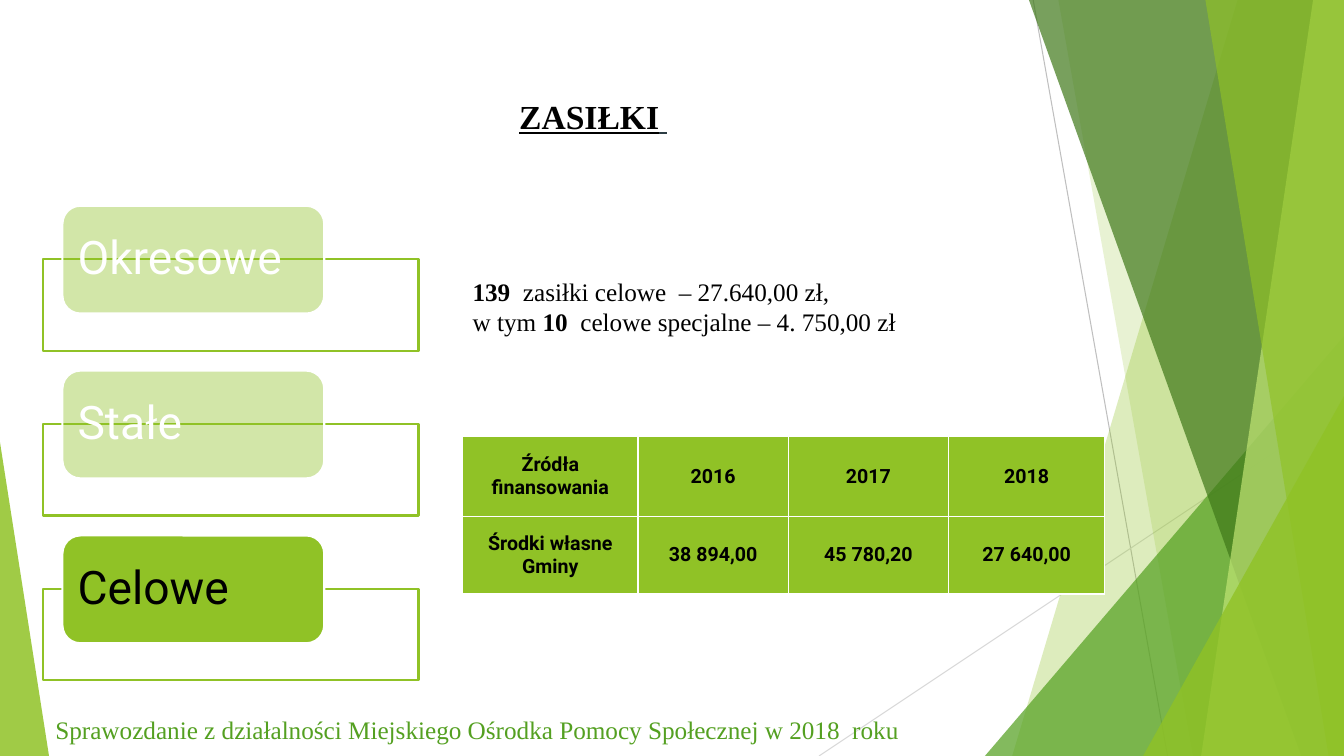
from dataclasses import dataclass
from typing import NamedTuple

from lxml.etree import SubElement
from pptx import Presentation
from pptx.dml.color import RGBColor
from pptx.enum.shapes import MSO_CONNECTOR, MSO_SHAPE
from pptx.enum.text import MSO_ANCHOR, PP_ALIGN
from pptx.oxml.ns import qn
from pptx.util import Pt

COLORS = {
    "lime": "90C226", "green": "54A021", "forest": "3F7819", "pale": "C0E474",
    "white": "FFFFFF", "black": "000000", "slate": "2C3C43",
    "gray": "BFBFBF", "light_gray": "D9D9D9",
}
SERIF, SANS = "Times New Roman", "Roboto"
WIDTH, HEIGHT = 960, 540


class Span(NamedTuple):
    text: str
    color: str = "black"
    bold: bool = False
    underline: bool = False


class Ray(NamedTuple):
    start: tuple[float, float]
    end: tuple[float, float]
    color: str


@dataclass
class Facet:
    points: list[tuple[float, float]]
    color: str
    alpha: int


@dataclass
class Wedge:
    box: tuple[float, float, float, float]
    apex: float
    color: str
    alpha: int


@dataclass
class Benefit:
    name: str
    alpha: int
    color: str


def panel(top_x: float, bottom_x: float, color: str, alpha: int) -> Facet:
    """Full-height facet between a slanted left edge and the slide's right edge."""
    points = [(top_x, 0), (WIDTH, 0), (WIDTH, HEIGHT), (bottom_x, HEIGHT)]
    return Facet(points, color, alpha)


RAYS = [Ray((738, 0), (834, HEIGHT), "gray"), Ray((WIDTH, 290), (585, HEIGHT), "light_gray")]
DECOR = [
    panel(884, 723, "lime", 30),
    panel(756, 852, "lime", 20),
    Wedge((703.5, 240, 256.5, 300), 1, "green", 72),
    panel(735, 929.5, "forest", 70),
    panel(938, 858, "pale", 70),
    panel(861, 949, "lime", 65),
    Wedge((816.5, 283, 143.5, 257), 1, "lime", 80),
    Wedge((0, 316, 35, 224), 0, "lime", 85),
]
BENEFITS = [
    Benefit("Okresowe", 40, "white"),
    Benefit("Stałe", 40, "white"),
    Benefit("Celowe", 100, "black"),
]
BENEFIT_TOP, BENEFIT_STEP = 147, 117.75
TITLE = [[Span("ZASIŁKI", bold=True, underline=True),
          Span(" ", "slate", bold=True, underline=True)]]
SUMMARY = [
    [Span("139  ", bold=True), Span("zasiłki celowe  – 27.640,00 zł,")],
    [Span("w tym "), Span("10", bold=True), Span("  celowe specjalne – 4. 750,00 zł")],
]
FOOTER = [[Span("Sprawozdanie z działalności Miejskiego Ośrodka Pomocy Społecznej w 2018  roku",
                "green")]]
FUNDING = [
    ["Źródła finansowania", "2016", "2017", "2018"],
    ["Środki własne Gminy", "38 894,00", "45 780,20", "27 640,00"],
]
COLUMN_WIDTHS = [125.3, 107.3, 114.5, 111.6]
ROW_HEIGHTS = [57, 55.5]


def rgb(name: str) -> RGBColor:
    return RGBColor.from_string(COLORS[name])


def place(sp, left: float, top: float, width: float, height: float) -> None:
    sp.left, sp.top, sp.width, sp.height = Pt(left), Pt(top), Pt(width), Pt(height)


def paint(sp, fill: str, alpha: int, line: str | None = None) -> None:
    """Fill with an opacity in percent and outline the shape, without shadow."""
    sp.shadow.inherit = False
    sp.fill.solid()
    sp.fill.fore_color.rgb = rgb(fill)
    if alpha < 100:
        clr = sp._element.spPr.find(qn("a:solidFill"))[0]
        SubElement(clr, qn("a:alpha"), val=str(alpha * 1000))
    if line:
        sp.line.color.rgb = rgb(line)
        sp.line.width = Pt(1.5)
    else:
        sp.line.fill.background()


def write(tf, lines: list[list[Span]], size: float, font: str = SERIF,
          align: PP_ALIGN = PP_ALIGN.LEFT) -> None:
    for i, spans in enumerate(lines):
        p = tf.paragraphs[0] if i == 0 else tf.add_paragraph()
        p.alignment = align
        for span in spans:
            r = p.add_run()
            r.text = span.text
            r.font.name, r.font.size = font, Pt(size)
            r.font.bold, r.font.underline = span.bold, span.underline
            r.font.color.rgb = rgb(span.color)


def add_ray(shapes, ray: Ray) -> None:
    line = shapes.add_connector(MSO_CONNECTOR.STRAIGHT, *map(Pt, ray.start + ray.end))
    line.line.color.rgb = rgb(ray.color)
    line.line.width = Pt(0.75)
    SubElement(line._element.spPr, qn("a:effectLst"))


def add_decor(shapes, item: Facet | Wedge) -> None:
    if isinstance(item, Facet):
        points = [(Pt(x), Pt(y)) for x, y in item.points]
        builder = shapes.build_freeform(*points[0])
        builder.add_line_segments(points[1:])
        sp = builder.convert_to_shape()
    else:
        sp = shapes.add_shape(MSO_SHAPE.ISOSCELES_TRIANGLE, *map(Pt, item.box))
        sp.adjustments[0] = item.apex
    paint(sp, item.color, item.alpha)


def add_benefit(shapes, benefit: Benefit, top: float) -> None:
    frame = shapes.add_shape(MSO_SHAPE.RECTANGLE, Pt(31), Pt(top + 38), Pt(268), Pt(65.5))
    paint(frame, "white", 90, "lime")
    tab = shapes.add_shape(MSO_SHAPE.ROUNDED_RECTANGLE, Pt(44.6), Pt(top), Pt(187), Pt(77))
    paint(tab, "lime", benefit.alpha, "white")
    tf = tab.text_frame
    tf.margin_top = tf.margin_bottom = 0
    tf.vertical_anchor = MSO_ANCHOR.MIDDLE
    write(tf, [[Span(benefit.name, benefit.color)]], 33, SANS)
    tf.paragraphs[0].line_spacing = 0.9


def add_text(shapes, box: tuple[float, float, float, float], lines: list[list[Span]],
             align: PP_ALIGN = PP_ALIGN.LEFT):
    tf = shapes.add_textbox(*map(Pt, box)).text_frame
    tf.word_wrap = True
    write(tf, lines, 18, align=align)
    return tf


def style_cell(cell, text: str) -> None:
    cell.fill.solid()
    cell.fill.fore_color.rgb = rgb("lime")
    cell.vertical_anchor = MSO_ANCHOR.MIDDLE
    cell.margin_left = cell.margin_right = Pt(5)
    cell.margin_top = cell.margin_bottom = 0
    write(cell.text_frame, [[Span(text, bold=True)]], 14, SANS, PP_ALIGN.CENTER)
    tc_pr = cell._tc.get_or_add_tcPr()
    for i, side in enumerate(("lnL", "lnR", "lnT", "lnB")):
        ln = tc_pr.makeelement(qn(f"a:{side}"), {"w": str(Pt(1))})
        fill = SubElement(ln, qn("a:solidFill"))
        SubElement(fill, qn("a:srgbClr"), val=COLORS["white"])
        tc_pr.insert(i, ln)


def add_funding_table(shapes) -> None:
    table = shapes.add_table(len(ROW_HEIGHTS), len(COLUMN_WIDTHS), Pt(330.5), Pt(311.8),
                             Pt(sum(COLUMN_WIDTHS)), Pt(sum(ROW_HEIGHTS))).table
    for column, width in zip(table.columns, COLUMN_WIDTHS):
        column.width = Pt(width)
    for row, height, texts in zip(table.rows, ROW_HEIGHTS, FUNDING):
        row.height = Pt(height)
        for cell, text in zip(row.cells, texts):
            style_cell(cell, text)


def main() -> None:
    prs = Presentation()
    prs.slide_width, prs.slide_height = Pt(WIDTH), Pt(HEIGHT)
    shapes = prs.slides.add_slide(prs.slide_layouts[5]).shapes
    place(shapes.title, 363.6, 64.8, 122, 36)
    tf = shapes.title.text_frame
    tf.word_wrap = False
    tf.vertical_anchor = MSO_ANCHOR.TOP
    write(tf, TITLE, 24)
    for ray in RAYS:
        add_ray(shapes, ray)
    for item in DECOR:
        add_decor(shapes, item)
    footer = add_text(shapes, (28, 507, 672, 33), FOOTER)
    footer.margin_left = Pt(11.5)
    for i, benefit in enumerate(BENEFITS):
        add_benefit(shapes, benefit, BENEFIT_TOP + i * BENEFIT_STEP)
    add_text(shapes, (330.5, 193.7, 421, 51), SUMMARY, PP_ALIGN.JUSTIFY)
    add_funding_table(shapes)
    prs.save("out.pptx")


if __name__ == "__main__":
    main()
